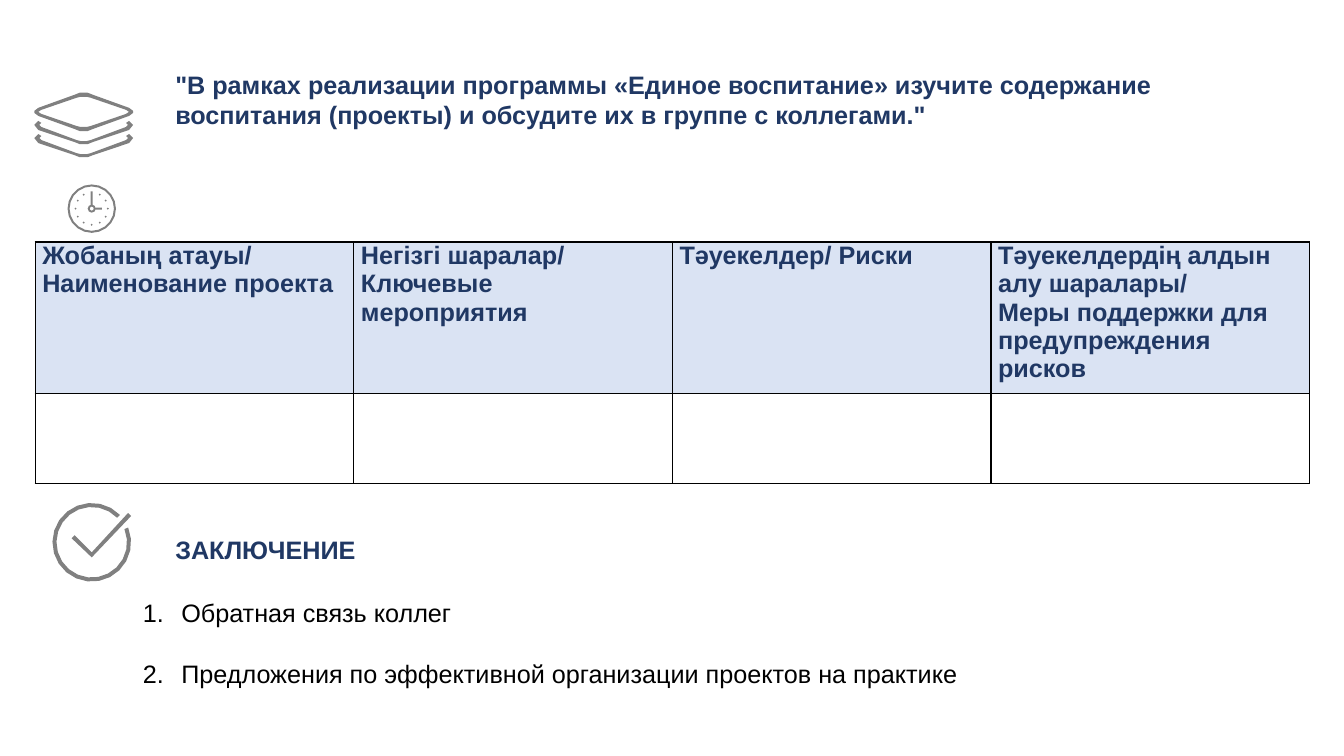
from dataclasses import dataclass
from math import cos, radians, sin

from lxml import etree
from pptx import Presentation
from pptx.dml.color import RGBColor
from pptx.enum.text import MSO_ANCHOR, PP_ALIGN
from pptx.oxml.ns import qn
from pptx.util import Inches, Pt

LEFT = PP_ALIGN.LEFT
TOP = MSO_ANCHOR.TOP

TASK = (
    '"В рамках реализации программы «Единое воспитание» изучите содержание '
    'воспитания (проекты) и обсудите их в группе с коллегами."'
)
HEADERS = [
    "Жобаның атауы/\nНаименование проекта",
    "Негізгі шаралар/ Ключевые мероприятия",
    "Тәуекелдер/ Риски",
    "Тәуекелдердің алдын алу шаралары/\nМеры поддержки для предупреждения рисков",
]
CONCLUSIONS = [
    "Обратная связь коллег",
    "Предложения по эффективной организации проектов на практике",
]

SHEET_OUTER = [(0.04, 0.19), (0.09, 0.17), (0.45, 0.04), (0.49, 0.01)]
SHEET_INNER = [(0.03, 0.15), (0.07, 0.14), (0.42, 0.02), (0.45, 0)]
LOWER_SHEET = [
    (0.04, 0.19), (0.09, 0.17), (0.45, 0.05), (0.49, 0), (0.45, -0.04),
    (0.42, -0.02), (0.44, 0), (0.42, 0.02), (0.07, 0.15), (0.03, 0.16),
]
CHECK_MARK = [(-0.2, -0.04), (-0.17, -0.07), (0, 0.1), (0.36, -0.29), (0.39, -0.26), (0, 0.15)]


@dataclass(frozen=True)
class Theme:
    font: str = "Arial"
    size: int = 18
    navy: str = "203864"
    black: str = "000000"
    icon: str = "808080"
    header: str = "DAE3F3"


def mirrored(points):
    return points + [(-x, y) for x, y in reversed(points)]


def diamond(quarter):
    half = quarter + [(x, -y) for x, y in reversed(quarter) if y]
    return mirrored(half)


def arc(radius, start, end, steps):
    angles = [radians(start + (end - start) * step / steps) for step in range(steps + 1)]
    return [(radius * cos(angle), radius * sin(angle)) for angle in angles]


def circle(radius, steps, center_x=0, center_y=0):
    return [(center_x + x, center_y + y) for x, y in arc(radius, 0, 360, steps)[:-1]]


def rectangle(left, top, right, bottom):
    return [(left, top), (right, top), (right, bottom), (left, bottom)]


class SlideBuilder:
    def __init__(self, slide, theme):
        self.slide = slide
        self.theme = theme

    def format_paragraph(self, paragraph, color, bold):
        paragraph.alignment = LEFT
        for run in paragraph.runs:
            run.font.name = self.theme.font
            run.font.size = Pt(self.theme.size)
            run.font.bold = bold
            run.font.color.rgb = RGBColor.from_string(color)

    def text(self, left, top, width, height, content, color, bold=False):
        shape = self.slide.shapes.add_textbox(
            Inches(left), Inches(top), Inches(width), Inches(height)
        )
        frame = shape.text_frame
        frame.word_wrap = True
        frame.vertical_anchor = TOP
        frame.text = content
        for paragraph in frame.paragraphs:
            self.format_paragraph(paragraph, color, bold)
        return frame

    def numbered_list(self, left, top, width, height, items):
        frame = self.text(left, top, width, height, "\n".join(items), self.theme.black)
        frame.margin_top = Inches(0.35)
        for index, paragraph in enumerate(frame.paragraphs):
            if index:
                paragraph.space_before = Pt(21.6)
            properties = paragraph._p.get_or_add_pPr()
            properties.set("marL", str(Inches(0.38)))
            properties.set("indent", str(-Inches(0.38)))
            etree.SubElement(properties, qn("a:buFont"), typeface=self.theme.font)
            etree.SubElement(properties, qn("a:buAutoNum"), type="arabicPeriod")

    def outline(self, center_x, center_y, contours):
        placed = [
            [(Inches(center_x + x), Inches(center_y + y)) for x, y in contour]
            for contour in contours
        ]
        builder = self.slide.shapes.build_freeform(*placed[0][0])
        for index, contour in enumerate(placed):
            if index:
                builder.move_to(*contour[0])
            builder.add_line_segments(contour[1:], close=True)
        shape = builder.convert_to_shape()
        shape.shadow.inherit = False
        shape.fill.solid()
        shape.fill.fore_color.rgb = RGBColor.from_string(self.theme.icon)
        shape.line.fill.background()

    def cell_borders(self, cell):
        properties = cell._tc.get_or_add_tcPr()
        for side in ("lnL", "lnR", "lnT", "lnB"):
            line = etree.SubElement(properties, qn(f"a:{side}"), w=str(Pt(1)))
            fill = etree.SubElement(line, qn("a:solidFill"))
            etree.SubElement(fill, qn("a:srgbClr"), val=self.theme.black)

    def table(self, left, top, width, row_heights, headers):
        table = self.slide.shapes.add_table(
            len(row_heights), len(headers), Inches(left), Inches(top),
            Inches(width), Inches(sum(row_heights)),
        ).table
        table.first_row = False
        table.horz_banding = False
        for row, height in zip(table.rows, row_heights):
            row.height = Inches(height)
        for cell in table.iter_cells():
            self.cell_borders(cell)
            cell.fill.background()
        for column, header in enumerate(headers):
            cell = table.cell(0, column)
            cell.margin_left = cell.margin_right = Inches(0.07)
            cell.margin_top = cell.margin_bottom = 0
            cell.fill.solid()
            cell.fill.fore_color.rgb = RGBColor.from_string(self.theme.header)
            cell.text_frame.text = header
            for paragraph in cell.text_frame.paragraphs:
                self.format_paragraph(paragraph, self.theme.navy, True)

    def layers_icon(self, center_x, center_y):
        self.outline(center_x, center_y, [diamond(SHEET_OUTER), diamond(SHEET_INNER)])
        for level in (1, 2):
            self.outline(center_x, center_y + 0.13 * level, [mirrored(LOWER_SHEET)])

    def check_icon(self, center_x, center_y):
        ring = arc(0.39, -22, 316, 20) + arc(0.35, 316, -22, 20)
        self.outline(center_x, center_y, [CHECK_MARK, ring])

    def clock_icon(self, center_x, center_y):
        rings = [circle(0.24, 20), circle(0.22, 20), circle(0.04, 8), circle(0.02, 8)]
        hands = [rectangle(-0.01, -0.17, 0.01, -0.04), rectangle(0.04, -0.01, 0.1, 0.01)]
        marks = [
            circle(0.01, 4, 0.16 * sin(radians(angle)), -0.16 * cos(radians(angle)))
            for angle in range(30, 360, 30)
        ]
        self.outline(center_x, center_y, rings + hands + marks)


def main():
    presentation = Presentation()
    presentation.slide_width = Inches(13.33)
    presentation.slide_height = Inches(7.5)
    slide = presentation.slides.add_slide(presentation.slide_layouts[6])
    theme = Theme()
    builder = SlideBuilder(slide, theme)
    builder.text(1.64, 0.64, 11.34, 0.71, TASK, theme.navy, bold=True)
    builder.layers_icon(0.83, 1.11)
    builder.numbered_list(1.32, 5.58, 11.13, 1.31, CONCLUSIONS)
    builder.text(1.64, 5.25, 4.27, 0.4, "ЗАКЛЮЧЕНИЕ", theme.navy, bold=True)
    builder.check_icon(0.91, 5.38)
    builder.clock_icon(0.91, 2.07)
    builder.table(0.35, 2.4, 12.64, (1.5, 0.9), HEADERS)
    presentation.save("out.pptx")


if __name__ == "__main__":
    main()
